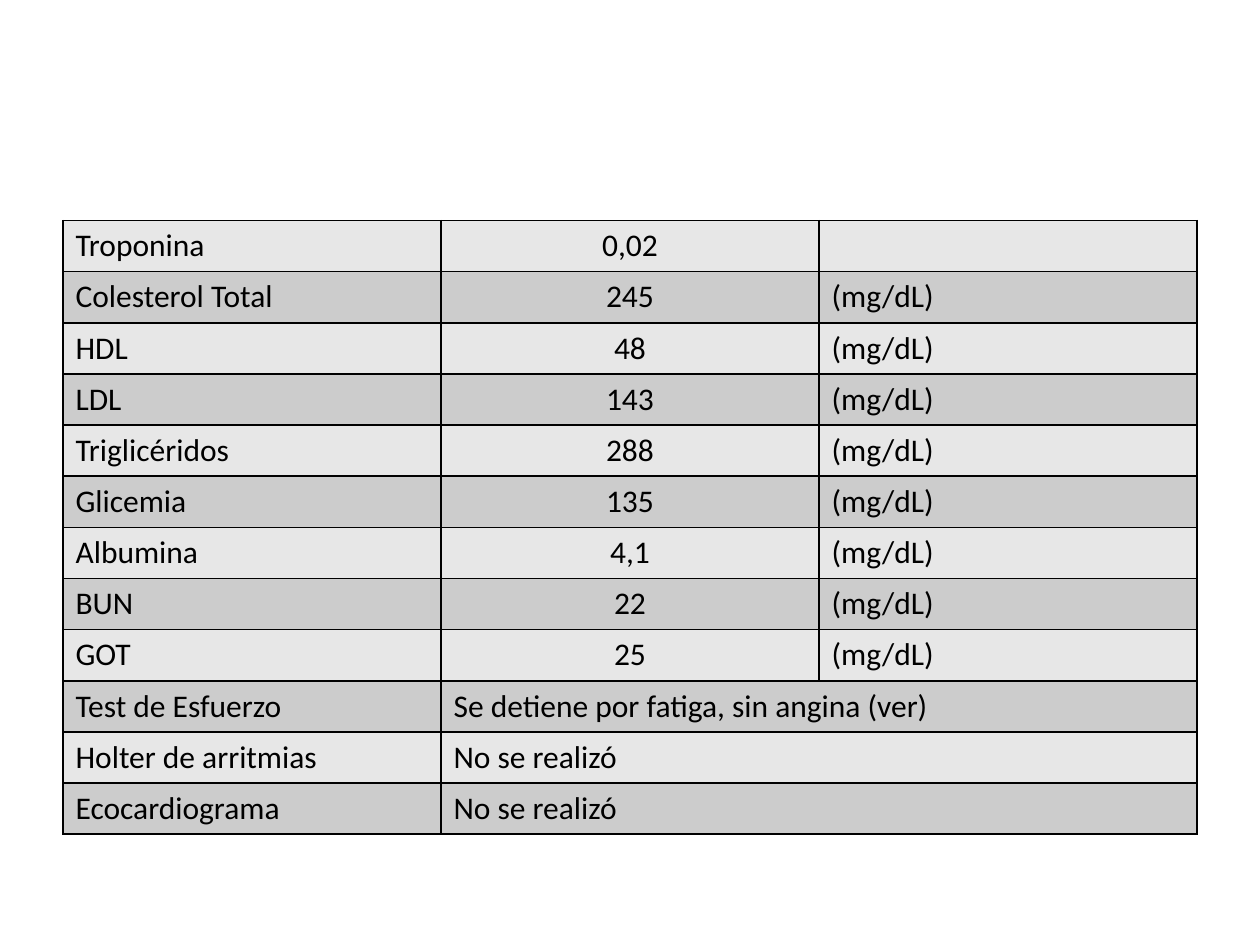
from dataclasses import dataclass

from lxml import etree
from pptx import Presentation
from pptx import util as u
from pptx.dml.color import RGBColor
from pptx.enum import text
from pptx.oxml import ns

PX = 9525


@dataclass(frozen=True)
class Theme:
    """Colours, font and type size of the slide."""
    font: str = "Calibri"
    size: int = 18
    ink: str = "000000"
    bands: tuple = ("E7E7E7", "CCCCCC")
    border: int = 1


THEME = Theme()
UNIT = "(mg/dL)"
LAB_RESULTS = [
    ("Troponina", "0,02", ""),
    ("Colesterol Total", "245", UNIT),
    ("HDL", "48", UNIT),
    ("LDL", "143", UNIT),
    ("Triglicéridos", "288", UNIT),
    ("Glicemia", "135", UNIT),
    ("Albumina", "4,1", UNIT),
    ("BUN", "22", UNIT),
    ("GOT", "25", UNIT),
]
STUDIES = [
    ("Test de Esfuerzo", "Se detiene por fatiga, sin angina (ver)"),
    ("Holter de arritmias", "No se realizó"),
    ("Ecocardiograma", "No se realizó"),
]


def px(length):
    """Turn pixels into EMU."""
    return u.Emu(length * PX)


def draw_borders(cell):
    """Rule all four sides of a cell."""
    properties = cell._tc.get_or_add_tcPr()
    for index, side in enumerate(("a:lnL", "a:lnR", "a:lnT", "a:lnB")):
        line = etree.Element(ns.qn(side), w=str(u.Pt(THEME.border)))
        fill = etree.SubElement(line, ns.qn("a:solidFill"))
        etree.SubElement(fill, ns.qn("a:srgbClr"), val=THEME.ink)
        properties.insert(index, line)


def style_cell(cell, band):
    """Give a cell its band colour, borders and font."""
    cell.fill.solid()
    cell.fill.fore_color.rgb = RGBColor.from_string(band)
    draw_borders(cell)
    font = cell.text_frame.paragraphs[0].font
    font.name = THEME.font
    font.size = u.Pt(THEME.size)
    font.color.rgb = RGBColor.from_string(THEME.ink)


def add_exam_table(slide, left, top, width, height):
    """Place the laboratory results and studies in the given box."""
    exams = LAB_RESULTS + STUDIES
    columns = len(LAB_RESULTS[0])
    frame = slide.shapes.add_table(
        len(exams), columns, px(left), px(top), px(width), px(height))
    table = frame.table
    table.first_row = table.horz_banding = False
    for row, exam in enumerate(exams):
        for column, entry in enumerate(exam):
            table.cell(row, column).text = entry
        for column in range(columns):
            style_cell(table.cell(row, column), THEME.bands[row % 2])
        result = table.cell(row, 1)
        if len(exam) == columns:
            result.text_frame.paragraphs[0].alignment = text.PP_ALIGN.CENTER
        else:
            result.merge(table.cell(row, columns - 1))


def main():
    """Build the exam slide and save it."""
    deck = Presentation()
    deck.slide_width, deck.slide_height = px(960), px(720)
    slide = deck.slides.add_slide(deck.slide_layouts[6])
    add_exam_table(slide, left=48, top=168, width=864, height=468)
    deck.save("out.pptx")


if __name__ == "__main__":
    main()
